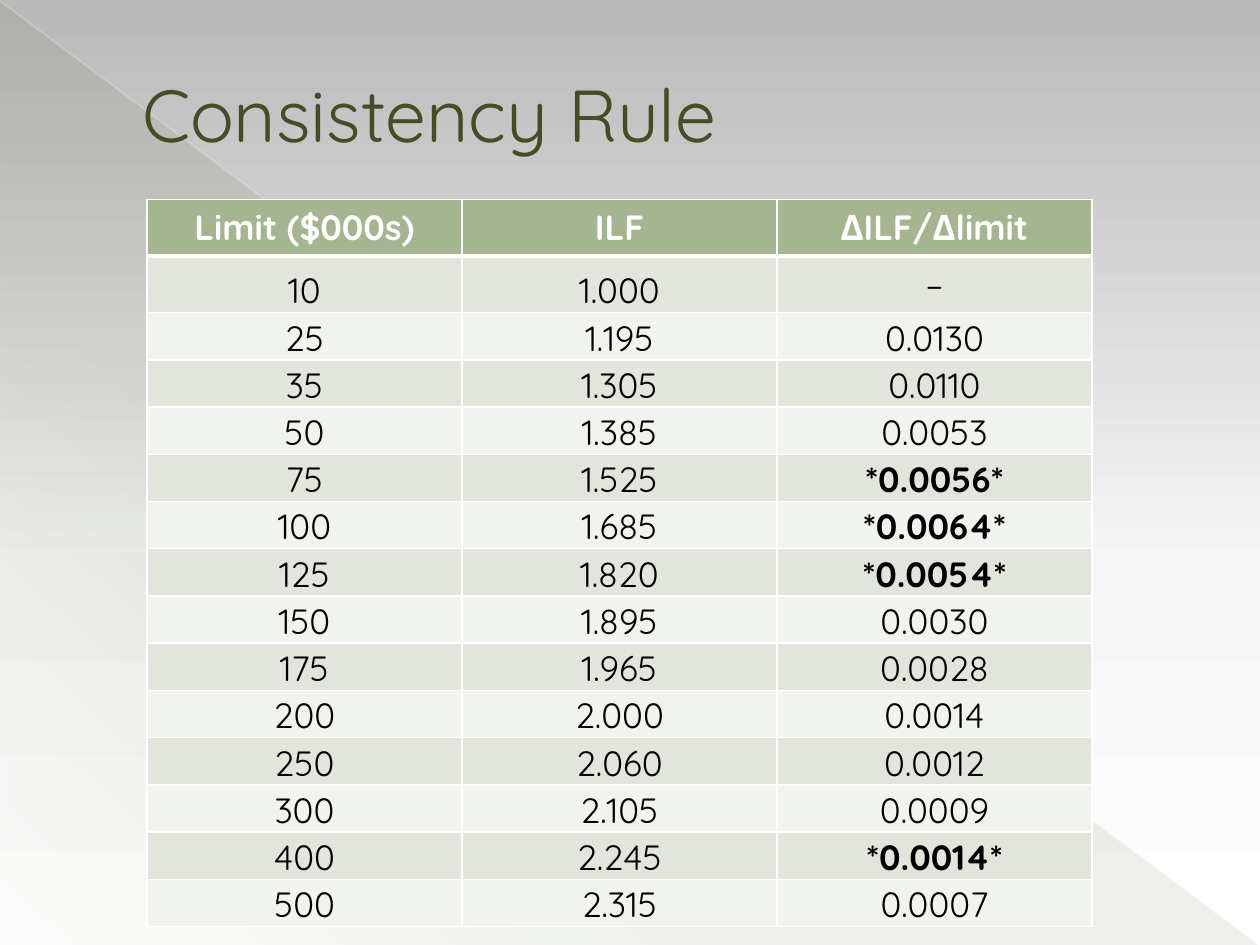
import pptx
import pptx.dml.color
import pptx.enum.shapes
import pptx.enum.text
import pptx.oxml.ns
import pptx.oxml.xmlchemy
import pptx.util
from lxml import etree

Pt = pptx.util.Pt
qn = pptx.oxml.ns.qn
ALIGN = pptx.enum.text.PP_ALIGN
ANCHOR = pptx.enum.text.MSO_ANCHOR
FONT = "Quicksand"
COLORS = {
    "olive": "444D26", "header": "A5B592", "odd": "E1E5DC", "even": "F0F3EE",
    "white": "FFFFFF", "black": "000000", "cream": "FFFDE3", "ivory": "FFFDE6",
    "gray": "B9B9B9", "mist": "F6F6F6",
}
HEADINGS = ("Limit ($000s)", "ILF", "ΔILF/Δlimit")
FACTORS = [
    ("10", "1.000", "–"),
    ("25", "1.195", "0.0130"),
    ("35", "1.305", "0.0110"),
    ("50", "1.385", "0.0053"),
    ("75", "1.525", "*0.0056*"),
    ("100", "1.685", "*0.0064*"),
    ("125", "1.820", "*0.0054*"),
    ("150", "1.895", "0.0030"),
    ("175", "1.965", "0.0028"),
    ("200", "2.000", "0.0014"),
    ("250", "2.060", "0.0012"),
    ("300", "2.105", "0.0009"),
    ("400", "2.245", "*0.0014*"),
    ("500", "2.315", "0.0007"),
]


def rgb(name):
    """Return the named colour as an RGBColor."""
    return pptx.dml.color.RGBColor.from_string(COLORS[name])


def add_color(parent, name, alpha=100):
    """Append a colour with an opacity in percent."""
    color = etree.SubElement(parent, qn("a:srgbClr"), val=COLORS[name])
    if alpha < 100:
        etree.SubElement(color, qn("a:alpha"), val=str(alpha * 1000))


def set_gradient(owner, fill, stops, angle):
    """Fill with (position, colour, opacity) stops at a clockwise angle."""
    fill.gradient()
    gradient = next(owner.iter(qn("a:gradFill")))
    for child in list(gradient):
        gradient.remove(child)
    stop_list = etree.SubElement(gradient, qn("a:gsLst"))
    for position, name, alpha in stops:
        stop = etree.SubElement(stop_list, qn("a:gs"), pos=str(position * 1000))
        add_color(stop, name, alpha)
    etree.SubElement(gradient, qn("a:lin"), ang=str(angle * 60000), scaled="0")


def write_text(frame, text, size=20, color="black", bold=False, align=ALIGN.CENTER):
    """Write one formatted paragraph and return it."""
    para = frame.paragraphs[0]
    para.alignment = align
    span = para.add_run()
    span.text = text
    span.font.name = FONT
    span.font.size = Pt(size)
    span.font.bold = bold
    span.font.color.rgb = rgb(color)
    return para


def add_line(page, start, end, color, width, alpha):
    """Draw a translucent straight line."""
    line = page.shapes.add_connector(
        pptx.enum.shapes.MSO_CONNECTOR.STRAIGHT, *map(Pt, start + end))
    line.line.width = Pt(width)
    line.line.fill.solid()
    line.line.fill.fore_color.rgb = rgb(color)
    solid = next(line.element.iter(qn("a:solidFill")))
    solid.clear()
    add_color(solid, color, alpha)
    etree.SubElement(line.element.spPr, qn("a:effectLst"))


def draw_backdrop(page, left, top, width, height):
    """Paint the background gradient, the large triangle and two lines."""
    set_gradient(page.element, page.background.fill,
                 [(0, "gray", 100), (60, "mist", 100), (100, "white", 100)], 90)
    triangle = page.shapes.add_shape(
        pptx.enum.shapes.MSO_SHAPE.RIGHT_TRIANGLE,
        Pt(left + 0.5), Pt(top + 1.5), Pt(width - 1.5), Pt(height - 1.5))
    triangle.shadow.inherit = False
    triangle.line.fill.background()
    set_gradient(triangle.element, triangle.fill,
                 [(0, "olive", 10), (70, "olive", 8), (100, "olive", 1)], 133)
    right, bottom = left + width, top + height
    add_line(page, (left, top + 0.5), (right - 0.5, bottom - 0.5), "cream", 0.39, 35)
    add_line(page, (right, top + 389.5), (left + 509, bottom - 0.5), "ivory", 0.47, 45)


def place_title(page, left, top, width, height):
    """Place and format the title in front of the backdrop."""
    title = page.shapes.title
    title.left, title.top, title.width, title.height = map(
        Pt, (left, top, width, height))
    title.text_frame.word_wrap = True
    title.text_frame.vertical_anchor = ANCHOR.MIDDLE
    para = write_text(title.text_frame, "Consistency Rule", size=42,
                      color="olive", align=ALIGN.LEFT)
    properties = para._p.get_or_add_pPr()
    properties.set("marL", str(Pt(38)))
    properties.set("indent", "0")
    title.element.getparent().append(title.element)


def set_borders(cell, top=1, bottom=1):
    """Give a cell white borders, with the widths in points."""
    properties = cell._tc.get_or_add_tcPr()
    sides = (("lnL", 1), ("lnR", 1), ("lnT", top), ("lnB", bottom))
    for index, (side, width) in enumerate(sides):
        border = etree.Element(qn("a:" + side), w=str(Pt(width)))
        add_color(etree.SubElement(border, qn("a:solidFill")), "white")
        properties.insert(index, border)


def fill_cell(cell, text, row):
    """Format a cell by its row number and its text."""
    is_header = row == 0
    if not is_header and text != "–":
        cell.vertical_anchor = ANCHOR.BOTTOM
        cell.margin_left = cell.margin_right = cell.margin_top = Pt(0.75)
        cell.margin_bottom = Pt(0)
    cell.fill.solid()
    cell.fill.fore_color.rgb = rgb(
        "header" if is_header else "odd" if row % 2 else "even")
    write_text(cell.text_frame, text, color="white" if is_header else "black",
               bold=is_header or text.startswith("*"))
    set_borders(cell, top=3 if row == 1 else 1, bottom=3 if is_header else 1)


def place_table(page, left, top, width, row_height):
    """Build the table of limits and factors."""
    rows = [HEADINGS] + FACTORS
    table = page.shapes.add_table(
        len(rows), len(HEADINGS), Pt(left), Pt(top), Pt(width),
        Pt(row_height * len(rows))).table
    for column in table.columns:
        column.width = Pt(width / len(HEADINGS))
    for row, values in enumerate(rows):
        table.rows[row].height = Pt(row_height)
        for column, text in enumerate(values):
            fill_cell(table.cell(row, column), text, row)


def main():
    """Build and save the slide."""
    deck = pptx.Presentation()
    deck.slide_width, deck.slide_height = Pt(720), Pt(540)
    page = deck.slides.add_slide(deck.slide_layouts[5])
    draw_backdrop(page, 0, 0, 720, 540)
    place_table(page, 84, 114, 540, 27)
    place_title(page, 36, 21, 648, 87)
    deck.save("out.pptx")


if __name__ == "__main__":
    main()
